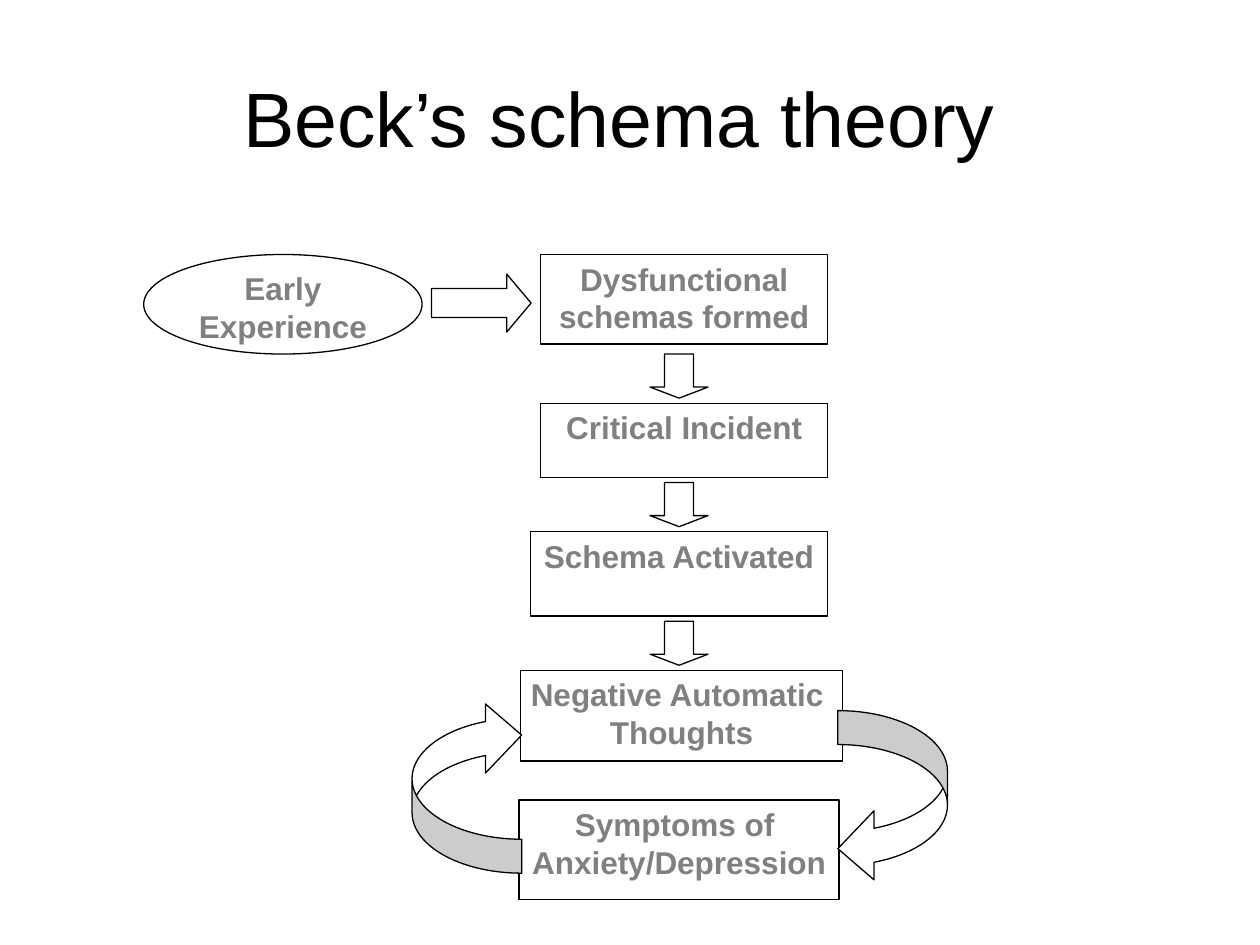
"""Build a one-slide flow chart of Beck's schema theory."""
from pptx import Presentation
from pptx.dml.color import RGBColor
from pptx.enum.shapes import MSO_SHAPE as Shape
from pptx.enum.text import MSO_ANCHOR as Anchor, PP_ALIGN as Align
from pptx.util import Inches, Pt

BLACK = RGBColor(0x00, 0x00, 0x00)
GREY = RGBColor(0x80, 0x80, 0x80)
WHITE = RGBColor(0xFF, 0xFF, 0xFF)

deck = Presentation()
deck.slide_width, deck.slide_height = Inches(10), Inches(7.5)
COLUMN = deck.slide_width / 100
ROW = deck.slide_height / 75
page = deck.slides.add_slide(deck.slide_layouts[6])


def add_outlined(kind, left, top, width, height):
    shape = page.shapes.add_shape(
        kind, int(left * COLUMN), int(top * ROW), int(width * COLUMN), int(height * ROW)
    )
    shape.shadow.inherit = False
    shape.fill.solid()
    shape.fill.fore_color.rgb = WHITE
    shape.line.color.rgb = BLACK
    shape.line.width = Pt(0.75)
    return shape


def write_lines(frame, lines, size, color, bold):
    frame.word_wrap = True
    for number, line in enumerate(lines):
        para = frame.add_paragraph() if number else frame.paragraphs[0]
        para.text = line
        para.alignment = Align.CENTER
        para.font.name = "Arial"
        para.font.size = Pt(size)
        para.font.bold = bold
        para.font.color.rgb = color


title = page.shapes.add_textbox(
    int(5 * COLUMN), int(3 * ROW), int(90 * COLUMN), int(12.5 * ROW)
)
title.text_frame.vertical_anchor = Anchor.MIDDLE
write_lines(title.text_frame, ["Beck’s schema theory "], 44, BLACK, False)

stages = [
    (Shape.OVAL, 11.4, 20.2, 22.1, 7.9, 0, 0.04, ["Early Experience"]),
    (Shape.RECTANGLE, 42.9, 20.2, 22.8, 7.1, 0.04, 0, ["Dysfunctional schemas formed"]),
    (Shape.RECTANGLE, 42.9, 32, 22.8, 5.9, 0.04, 0.04, ["Critical Incident"]),
    (Shape.RECTANGLE, 42.1, 42.2, 23.6, 6.7, 0.04, 0.04, ["Schema Activated"]),
    (Shape.RECTANGLE, 41.3, 53.2, 25.6, 7.2, 0.04, 0.04, ["Negative Automatic ", "Thoughts"]),
    (Shape.RECTANGLE, 41.2, 63.5, 25.4, 7.9, 0.04, 0.04, ["Symptoms of ", "Anxiety/Depression"]),
]
for kind, left, top, width, height, above, below, lines in stages:
    box = add_outlined(kind, left, top, width, height)
    frame = box.text_frame
    frame.vertical_anchor = Anchor.TOP
    frame.margin_left = frame.margin_right = Inches(0.08)
    frame.margin_top, frame.margin_bottom = Inches(above), Inches(below)
    write_lines(frame, lines, 18, GREY, True)

arrows = [
    (Shape.DOWN_ARROW, 51.6, 28.1, 4.6, 3.5, 0, (0.5, 0.25)),
    (Shape.DOWN_ARROW, 51.6, 38.3, 4.6, 3.5, 0, (0.5, 0.25)),
    (Shape.DOWN_ARROW, 51.6, 49.3, 4.6, 3.5, 0, (0.5, 0.25)),
    (Shape.DOWN_ARROW, 35.9, 20.1, 4.6, 7.9, 270, (0.5, 0.42)),
    (Shape.CURVED_LEFT_ARROW, 66.5, 56.4, 8.7, 13.7, 0, (0.31, 0.63, 0.33)),
    (Shape.CURVED_LEFT_ARROW, 32.7, 55.6, 8.7, 13.7, 180, (0.31, 0.63, 0.33)),
]
for kind, left, top, width, height, turn, bends in arrows:
    arrow = add_outlined(kind, left, top, width, height)
    arrow.rotation = turn
    for number, bend in enumerate(bends):
        arrow.adjustments[number] = bend

deck.save("out.pptx")
